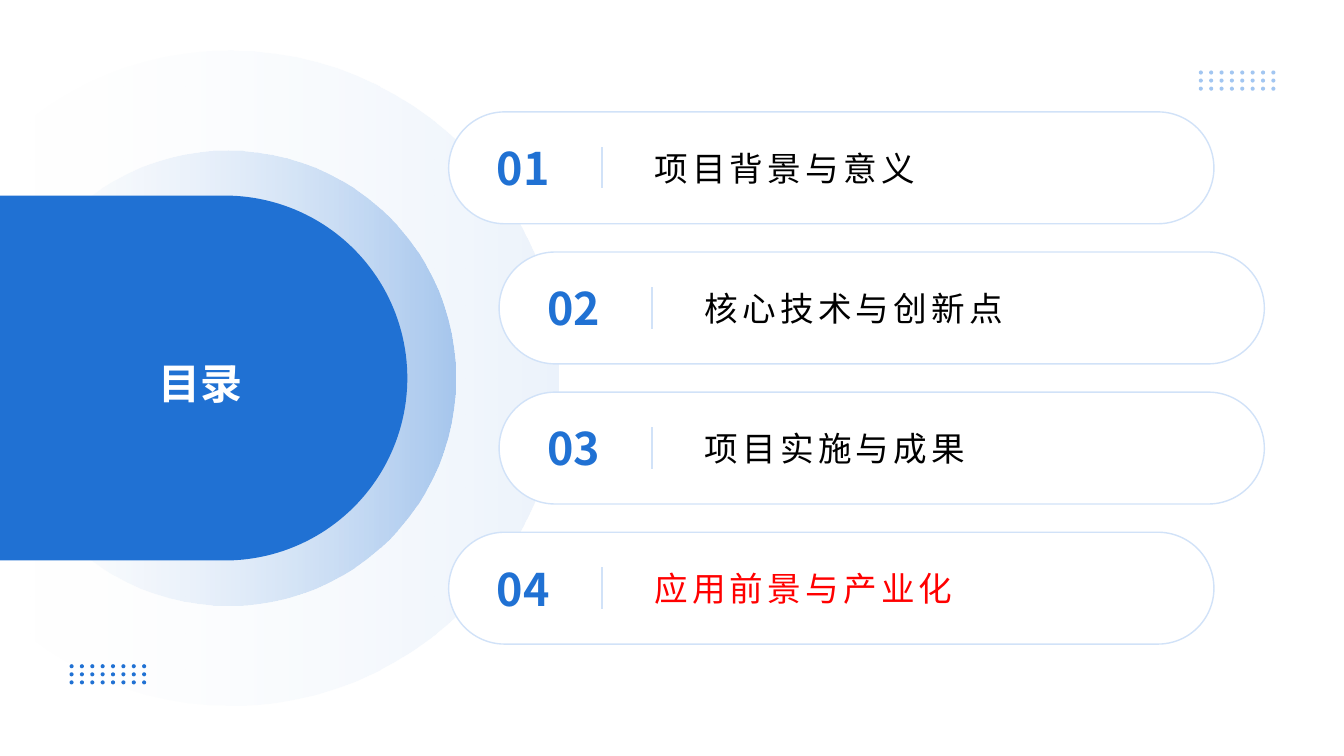
import math
import pptx
import pptx.dml.color
import pptx.enum.shapes
import pptx.enum.text
import pptx.oxml
import pptx.oxml.ns
import pptx.util

TITLE = "目录"
CHAPTERS = [
    {"number": "01", "name": "项目背景与意义", "color": "000000", "column": 0},
    {"number": "02", "name": "核心技术与创新点", "color": "000000", "column": 1},
    {"number": "03", "name": "项目实施与成果", "color": "000000", "column": 1},
    {"number": "04", "name": "应用前景与产业化", "color": "FF0000", "column": 0},
]
BLUE, SKY, PALE, WHITE = "2071D3", "A2C6F1", "D1E2F8", "FFFFFF"
SANS = "Noto Sans CJK SC"
WIDTH, HEIGHT = 13.33, 7.5
MIDDLE = HEIGHT / 2

PILL_LEFT, PILL_TOP = 4.45, 1.11
PILL_WIDTH, PILL_HEIGHT = 7.59, 1.11
COLUMN_STEP, ROW_STEP = 0.5, 1.39
TEXT_HEIGHT, DIVIDER_HEIGHT = 0.82, 0.41

DOT_COLUMNS, DOT_ROWS = 8, 3
DOT_SPAN_X, DOT_SPAN_Y, DOT_RADIUS = 0.72, 0.16, 0.02
DOT_GRIDS = [(0.71, 6.61, BLUE), (11.91, 0.72, SKY)]

inch = pptx.util.Inches
qn = pptx.oxml.ns.qn
deck = pptx.Presentation()
deck.slide_width, deck.slide_height = inch(WIDTH), inch(HEIGHT)
page = deck.slides.add_slide(deck.slide_layouts[6])


def rgb(color):
    return pptx.dml.color.RGBColor.from_string(color)


def element(tag, attributes=""):
    return pptx.oxml.parse_xml(
        f'<a:{tag} {pptx.oxml.ns.nsdecls("a")} {attributes}/>')


def paint(shape, fill, line=None):
    shape.shadow.inherit = False
    shape.fill.solid()
    shape.fill.fore_color.rgb = rgb(fill)
    if line:
        shape.line.color.rgb = rgb(line)
        shape.line.width = pptx.util.Pt(1)
    else:
        shape.line.fill.background()


def fade(shape, opacity):
    paint(shape, BLUE)
    shape.fill.gradient()
    shape.fill.gradient_angle = 180
    for stop, color in zip(shape.fill.gradient_stops, (BLUE, PALE)):
        stop.color.rgb = rgb(color)
    colors = shape._element.spPr.find(qn("a:gradFill")).iter(qn("a:srgbClr"))
    for node, share in zip(colors, (opacity, 0)):
        node.append(element("alpha", f'val="{share * 1000}"'))


def outline(centers, radius, reach, corners=()):
    quarter = math.pi / 2
    angles = sorted({-reach, -quarter, 0, quarter, reach})
    builder = None
    for x, y in centers:
        points = [(x + radius * math.cos(a), y + radius * math.sin(a))
                  for a in angles] + list(corners)
        points = [(inch(across), inch(down)) for across, down in points]
        if builder:
            builder.move_to(*points[0])
        else:
            builder = page.shapes.build_freeform(*points[0], scale=1.0)
        builder.add_line_segments(points[1:], close=True)
    shape = builder.convert_to_shape()
    for start in list(shape._element.iter(qn("a:moveTo"))):
        for _ in angles[1:]:
            chord = start.getnext()
            chord.getparent().remove(chord)
        sweep = round(math.degrees(reach) * 60000)
        for angle in (0, 21600000 - sweep):
            start.addnext(element(
                "arcTo", f'wR="{inch(radius)}" hR="{inch(radius)}" '
                f'stAng="{angle}" swAng="{sweep}"'))
    return shape


def preset(kind, left, top, width, height, adjustment):
    shape = page.shapes.add_shape(
        kind, inch(left), inch(top), inch(width), inch(height))
    shape.adjustments[0] = adjustment
    return shape


def write(text, left, top, width, height, size, font, color,
          bold=False, centred=False, spacing=0, inset=0, leading=1, wrap=True):
    box = page.shapes.add_textbox(inch(left), inch(top), inch(width), inch(height))
    frame = box.text_frame
    frame.word_wrap = wrap
    frame.vertical_anchor = pptx.enum.text.MSO_ANCHOR.MIDDLE
    frame.margin_left = frame.margin_right = inch(inset)
    frame.margin_top = frame.margin_bottom = inch(inset / 2)
    para = frame.paragraphs[0]
    para.line_spacing = leading
    align = pptx.enum.text.PP_ALIGN
    para.alignment = align.CENTER if centred else align.LEFT
    span = para.add_run()
    span.text = text
    span.font.size, span.font.bold = pptx.util.Pt(size), bold
    span.font.name = font
    span.font.color.rgb = rgb(color)
    properties = span._r.get_or_add_rPr()
    properties.set("spc", str(spacing * 100))
    properties.find(qn("a:latin")).addnext(element("ea", f'typeface="{SANS}"'))


def divide(x, top):
    line = page.shapes.add_connector(
        pptx.enum.shapes.MSO_CONNECTOR.STRAIGHT,
        inch(x), inch(top), inch(x), inch(top + DIVIDER_HEIGHT))
    line.line.color.rgb = rgb(PALE)
    line.line.width = pptx.util.Pt(1.5)
    line._element.spPr.append(element("effectLst"))


def draw_cover():
    center, radius = 2.29, 3.25
    halo = outline([(center, MIDDLE)], radius, math.acos(-center / radius))
    fade(halo, 9)
    ring = 4.52
    fade(preset(pptx.enum.shapes.MSO_SHAPE.DONUT,
                0, MIDDLE - ring / 2, ring, ring, 0.239), 36)
    center, radius = 2.23, 1.81
    corners = [(0, MIDDLE + radius), (0, MIDDLE - radius)]
    paint(outline([(center, MIDDLE)], radius, math.pi / 2, corners), BLUE)
    for left, top, color in DOT_GRIDS:
        dots = [(left + column * DOT_SPAN_X / (DOT_COLUMNS - 1),
                 top + row * DOT_SPAN_Y / (DOT_ROWS - 1))
                for row in range(DOT_ROWS) for column in range(DOT_COLUMNS)]
        paint(outline(dots, DOT_RADIUS, math.pi), color)
    write(TITLE, 1.47, 3.16, 2.11, 1.18, 30, "Arial", WHITE,
          bold=True, inset=0.1, leading=1.2)


def draw_chapter(row, chapter):
    left = PILL_LEFT + chapter["column"] * COLUMN_STEP
    top = PILL_TOP + row * ROW_STEP
    center = top + PILL_HEIGHT / 2
    pill = preset(pptx.enum.shapes.MSO_SHAPE.ROUNDED_RECTANGLE,
                  left, top, PILL_WIDTH, PILL_HEIGHT, 0.5)
    paint(pill, WHITE, PALE)
    text_top = center - TEXT_HEIGHT / 2
    write(chapter["number"], left + 0.26, text_top, 0.96, TEXT_HEIGHT,
          32, SANS, BLUE, bold=True, centred=True, wrap=False)
    write(chapter["name"], left + 2.04, text_top, 5.33, TEXT_HEIGHT,
          24, SANS, chapter["color"], spacing=3)
    divide(left + 1.52, center - DIVIDER_HEIGHT / 2)


def main():
    draw_cover()
    for row, chapter in enumerate(CHAPTERS):
        draw_chapter(row, chapter)
    deck.save("out.pptx")


if __name__ == "__main__":
    main()
